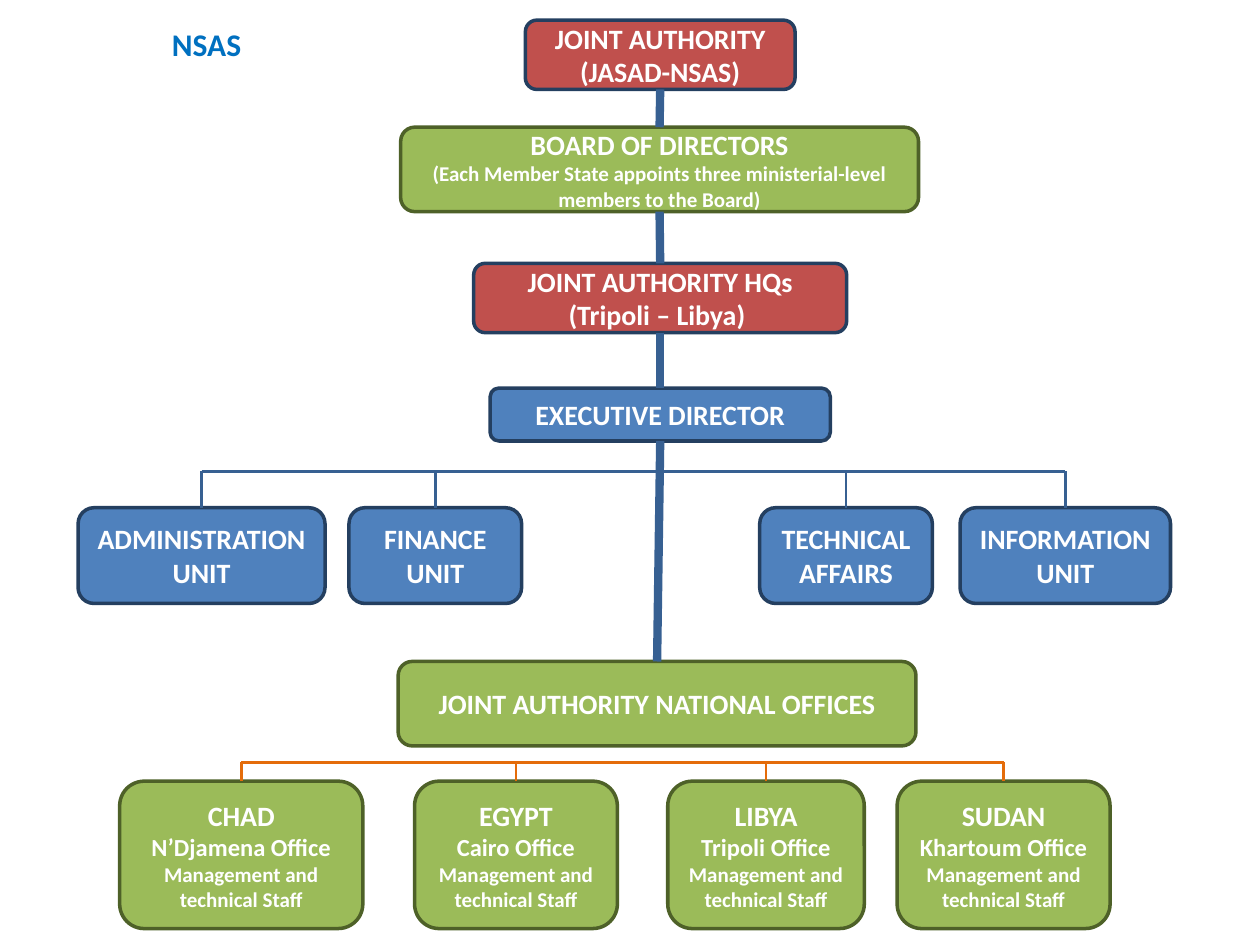
from lxml import etree
from pptx import Presentation
from pptx.dml.color import RGBColor
from pptx.enum.shapes import MSO_CONNECTOR, MSO_SHAPE
from pptx.enum.text import MSO_ANCHOR, PP_ALIGN
from pptx.oxml.ns import qn
from pptx.util import Inches, Pt

ROUNDED = MSO_SHAPE.ROUNDED_RECTANGLE
STRAIGHT = MSO_CONNECTOR.STRAIGHT
CENTER = PP_ALIGN.CENTER
MIDDLE = MSO_ANCHOR.MIDDLE
TOP_SIDE, BOTTOM_SIDE = 0, 2

COLUMNS, ROWS = 100, 75
WIDTH, HEIGHT = Inches(10), Inches(7.5)

# Fill and outline of each kind of box
RED = ("C0504D", "243F60")
GREEN = ("9BBB59", "4E6128")
BLUE = ("4F81BD", "243F60")
NAVY, ORANGE = "376092", "E46C0A"


def color(value):
    return RGBColor.from_string(value)


def write(para, text, size=16, ink="FFFFFF", bold=True, font="Calibri"):
    para.alignment = CENTER
    span = para.add_run()
    span.text = text
    span.font.name = font
    span.font.size = Pt(size)
    span.font.bold = bold
    span.font.color.rgb = color(ink)


class Chart:
    """Draws an organisation chart on one page, on a 100 by 75 grid."""

    def __init__(self, page):
        self.page = page

    def x(self, columns):
        return round(WIDTH * columns / COLUMNS)

    def y(self, rows):
        return round(HEIGHT * rows / ROWS)

    def place(self, left, top, width, height):
        return self.x(left), self.y(top), self.x(width), self.y(height)

    def label(self, area, text, **style):
        box = self.page.shapes.add_textbox(*self.place(*area))
        box.text_frame.word_wrap = True
        write(box.text_frame.paragraphs[0], text, **style)

    def box(self, area, theme, lines):
        """Add a rounded box; lines are (text, size) pairs."""
        fill, outline = theme
        box = self.page.shapes.add_shape(ROUNDED, *self.place(*area))
        box.shadow.inherit = False
        box.fill.solid()
        box.fill.fore_color.rgb = color(fill)
        box.line.color.rgb = color(outline)
        box.line.width = Pt(2)
        frame = box.text_frame
        frame.word_wrap = True
        frame.vertical_anchor = MIDDLE
        for index, (text, size) in enumerate(lines):
            para = frame.add_paragraph() if index else frame.paragraphs[0]
            write(para, text, size=size)
        return box

    def line(self, start, end, ink, weight):
        """Add a line between two points given in slide units."""
        line = self.page.shapes.add_connector(STRAIGHT, *start, *end)
        line.line.color.rgb = color(ink)
        line.line.width = Pt(weight)
        etree.SubElement(line._element.spPr, qn("a:effectLst"))
        return line

    def trunk(self, upper, lower):
        line = self.line((0, 0), (0, 0), NAVY, 4.75)
        line.begin_connect(upper, BOTTOM_SIDE)
        line.end_connect(lower, TOP_SIDE)

    def branches(self, boxes, row, ink):
        """Add a rail at the given row and a drop from it to each box."""
        rail = self.y(row)
        middles = [box.left + box.width // 2 for box in boxes]
        self.line((middles[0], rail), (middles[-1], rail), ink, 1.5)
        for box, middle in zip(boxes, middles):
            drop = self.line((middle, rail), (middle, box.top), ink, 1.5)
            drop.end_connect(box, TOP_SIDE)


LEVELS = [
    ((41.7, 1.6, 21.4, 5.5), RED, [("JOINT AUTHORITY", 16), ("(JASAD-NSAS)", 16)]),
    ((31.8, 10.1, 41.1, 6.7), GREEN, [
        ("BOARD OF DIRECTORS", 16),
        ("(Each Member State appoints three ministerial-level members to the Board)", 12)]),
    ((37.6, 20.9, 29.6, 5.5), RED, [("JOINT AUTHORITY HQs", 16), ("(Tripoli – Libya) ", 16)]),
    ((38.9, 30.8, 27, 4.2), BLUE, [("EXECUTIVE DIRECTOR", 16)]),
    ((31.6, 52.5, 41.1, 6.7), GREEN, [("JOINT AUTHORITY NATIONAL OFFICES", 16)]),
]
# Left column, width and text
UNITS = [
    (6.2, 19.6, "ADMINISTRATION UNIT"),
    (27.7, 13.7, "FINANCE UNIT"),
    (60.3, 13.7, "TECHNICAL AFFAIRS"),
    (76.2, 16.7, "INFORMATION UNIT"),
]
OFFICES = [
    (9.5, 19.3, "CHAD", "N’Djamena"),
    (32.9, 16.1, "EGYPT", "Cairo"),
    (53, 15.6, "LIBYA", "Tripoli"),
    (71.2, 16.9, "SUDAN", "Khartoum"),
]


def main():
    deck = Presentation()
    deck.slide_width, deck.slide_height = WIDTH, HEIGHT
    chart = Chart(deck.slides.add_slide(deck.slide_layouts[6]))

    chart.label((-8.6, 1.5, 50, 4), "NSAS", size=18, ink="0070C0")
    levels = [chart.box(*level) for level in LEVELS]
    units = [chart.box((left, 40.3, width, 7.6), BLUE, [(name, 16)])
             for left, width, name in UNITS]
    offices = [
        chart.box((left, 62, width, 11.7), GREEN, [
            (country, 16), (f"{city} Office", 14),
            ("Management and technical Staff", 12)])
        for left, width, country, city in OFFICES]

    for upper, lower in zip(levels, levels[1:]):
        chart.trunk(upper, lower)
    chart.branches(units, 37.4, NAVY)
    chart.branches(offices, 60.5, ORANGE)
    deck.save("out.pptx")


if __name__ == "__main__":
    main()
